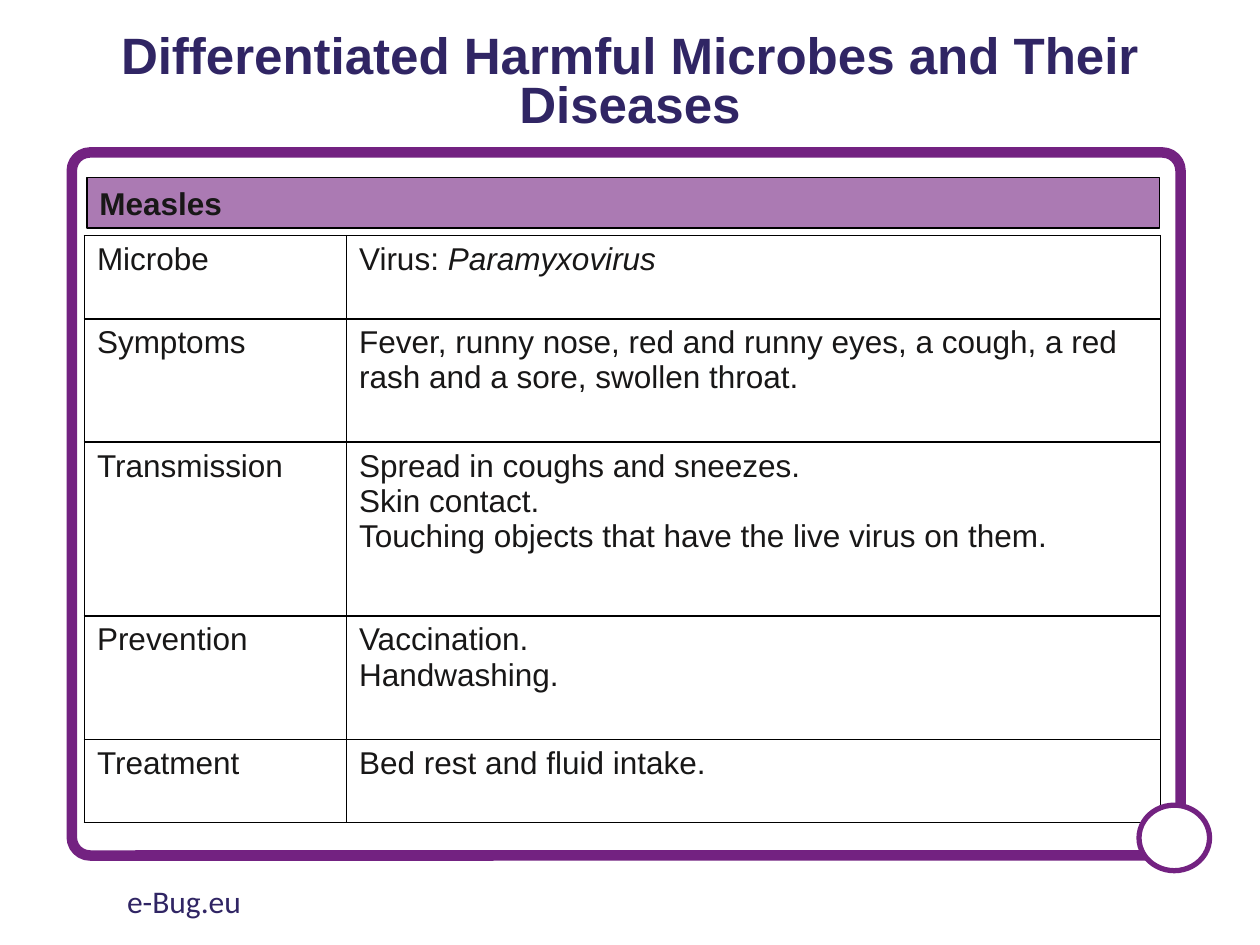
from lxml.etree import SubElement
from pptx import Presentation
from pptx.dml.color import RGBColor
from pptx.enum.shapes import MSO_SHAPE
from pptx.enum.text import MSO_ANCHOR, PP_ALIGN
from pptx.oxml.ns import qn
from pptx.util import Inches, Pt

NAVY = RGBColor(0x30, 0x25, 0x64)
INK = RGBColor(0x18, 0x17, 0x17)
PURPLE = RGBColor(0x73, 0x22, 0x81)
LILAC = RGBColor(0xAB, 0x7A, 0xB3)
BLACK = RGBColor(0, 0, 0)
WHITE = RGBColor(255, 255, 255)

COLUMNS, ROWS = 100, 75

# Each value is a list of paragraphs; each paragraph is a list of (text, italic) runs.
FACTS = [
    ("Microbe", [[("Virus: ", False), ("Paramyxovirus", True)]], 6.6),
    ("Symptoms", [[("Fever, runny nose, red and runny eyes, a cough, "
                    "a red rash and a sore, swollen throat.", False)]], 9.8),
    ("Transmission", [[("Spread in coughs and sneezes.", False)],
                      [("Skin contact.", False)],
                      [("Touching objects that have the live virus on them.", False)]], 13.8),
    ("Prevention", [[("Vaccination.", False)], [("Handwashing.", False)]], 9.8),
    ("Treatment", [[("Bed rest and fluid intake.", False)]], 6.6),
]


class DiseaseSlide:
    """Places elements on a grid of COLUMNS by ROWS."""

    def __init__(self, presentation):
        self.cell_width = presentation.slide_width / COLUMNS
        self.cell_height = presentation.slide_height / ROWS
        self.slide = presentation.slides.add_slide(presentation.slide_layouts[5])

    def across(self, columns):
        return round(columns * self.cell_width)

    def down(self, rows):
        return round(rows * self.cell_height)

    def box(self, left, top, width, height):
        return self.across(left), self.down(top), self.across(width), self.down(height)

    def style(self, paragraph, color, size=18, font="Arial", bold=False):
        for run in paragraph.runs:
            run.font.name, run.font.size, run.font.bold = font, Pt(size), bold
            run.font.color.rgb = color

    def title(self, text, *place):
        title = self.slide.shapes.title
        title.left, title.top, title.width, title.height = self.box(*place)
        frame = title.text_frame
        frame.text = text
        frame.word_wrap = True
        frame.vertical_anchor = MSO_ANCHOR.MIDDLE
        paragraph = frame.paragraphs[0]
        paragraph.alignment = PP_ALIGN.CENTER
        paragraph.line_spacing = 0.8
        self.style(paragraph, NAVY, 29.2, bold=True)

    def shape(self, kind, place, line, line_width, fill=None):
        shape = self.slide.shapes.add_shape(kind, *self.box(*place))
        shape.shadow.inherit = False
        shape.line.color.rgb = line
        shape.line.width = Pt(line_width)
        if fill is None:
            shape.fill.background()
        else:
            shape.fill.solid()
            shape.fill.fore_color.rgb = fill
        return shape

    def heading(self, text, *place):
        bar = self.shape(MSO_SHAPE.RECTANGLE, place, BLACK, 0.75, LILAC)
        bar.text_frame.text = text
        bar.text_frame.vertical_anchor = MSO_ANCHOR.TOP
        paragraph = bar.text_frame.paragraphs[0]
        paragraph.alignment = PP_ALIGN.LEFT
        self.style(paragraph, INK, bold=True)

    def text(self, text, *place):
        frame = self.slide.shapes.add_textbox(*self.box(*place)).text_frame
        frame.word_wrap = True
        frame.text = text
        self.style(frame.paragraphs[0], NAVY, font="Calibri")

    def table(self, facts, left, top, widths):
        heights = [height for _, _, height in facts]
        place = self.box(left, top, sum(widths), sum(heights))
        table = self.slide.shapes.add_table(len(facts), len(widths), *place).table
        table.first_row = table.horz_banding = False
        for column, width in zip(table.columns, widths):
            column.width = self.across(width)
        for row, (label, value, height) in zip(table.rows, facts):
            row.height = self.down(height)
            for cell, paragraphs in zip(row.cells, ([[(label, False)]], value)):
                self.fill_cell(cell, paragraphs)

    def fill_cell(self, cell, paragraphs):
        frame = cell.text_frame
        for index, runs in enumerate(paragraphs):
            paragraph = frame.add_paragraph() if index else frame.paragraphs[0]
            for text, italic in runs:
                run = paragraph.add_run()
                run.text = text
                run.font.italic = italic
            self.style(paragraph, INK)
        properties = cell._tc.get_or_add_tcPr()
        for side in ("lnL", "lnR", "lnT", "lnB"):
            border = SubElement(properties, qn(f"a:{side}"), w=str(Pt(1)))
            fill = SubElement(border, qn("a:solidFill"))
            SubElement(fill, qn("a:srgbClr"), val=str(BLACK))
        cell.fill.background()


def main():
    presentation = Presentation()
    presentation.slide_width, presentation.slide_height = Inches(10), Inches(7.5)
    page = DiseaseSlide(presentation)
    page.title("Differentiated Harmful Microbes and Their Diseases", 6.9, 2, 86.2, 9.4)
    page.heading("Measles", 6.9, 14.1, 85.1, 4)
    page.table(FACTS, 6.7, 18.7, (20.8, 64.6))
    frame = page.shape(MSO_SHAPE.ROUNDED_RECTANGLE, (5.7, 12.1, 88, 55.8), PURPLE, 6)
    frame.adjustments[0] = 0.026
    page.shape(MSO_SHAPE.OVAL, (90.4, 63.9, 5.6, 5.2), PURPLE, 3, WHITE)
    page.text("e-Bug.eu", 9.1, 69.5, 33.8, 4)
    presentation.save("out.pptx")


if __name__ == "__main__":
    main()
